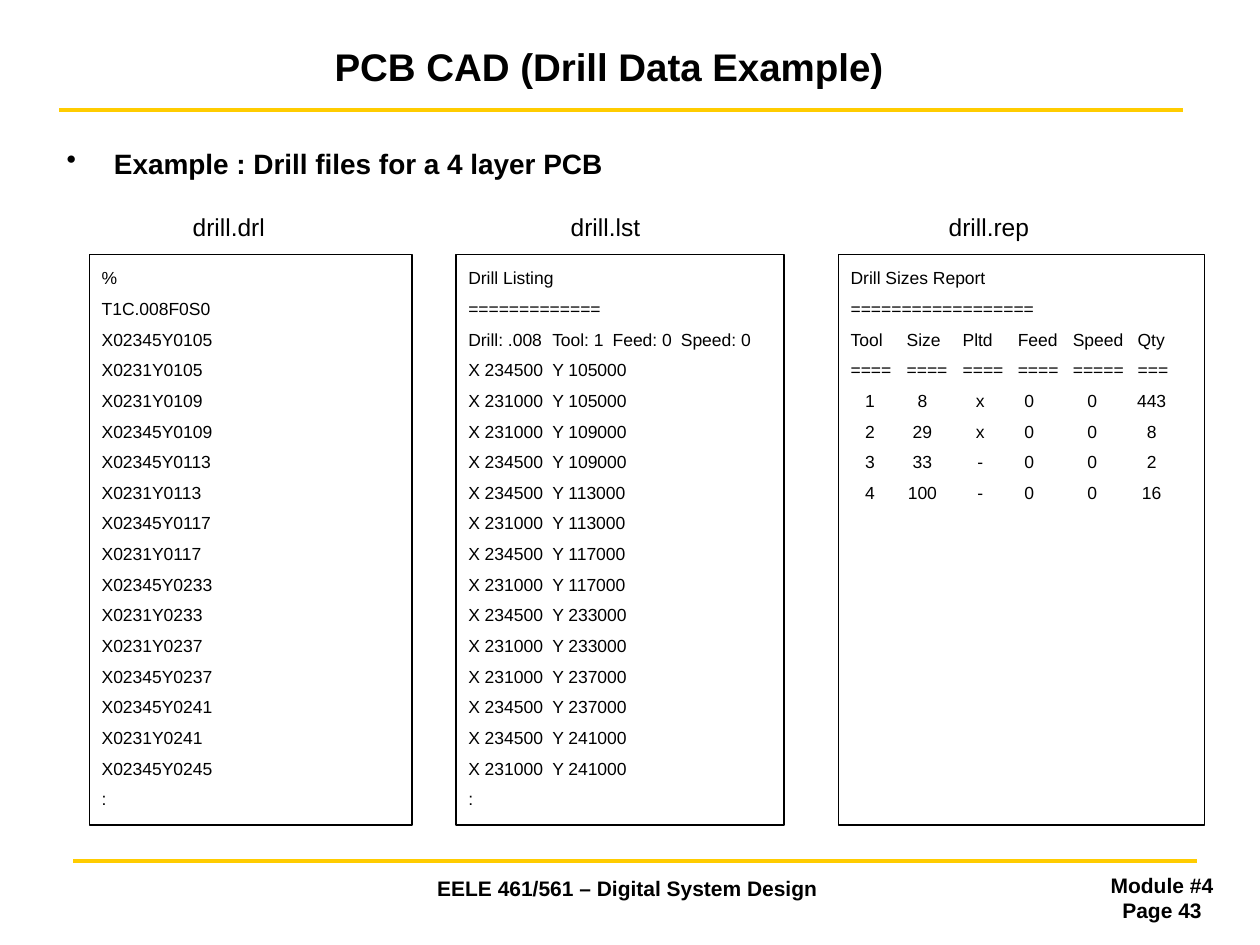
from lxml import etree
from pptx import Presentation
from pptx import util as u
from pptx.dml.color import RGBColor
from pptx.enum import shapes, text
from pptx.oxml import ns

Pt = u.Pt
BLACK = RGBColor(0x00, 0x00, 0x00)
GOLD = RGBColor(0xFF, 0xCC, 0x00)
CENTER = text.PP_ALIGN.CENTER
LEFT = text.PP_ALIGN.LEFT


class SlideBuilder:
    font = "Arial"

    def __init__(self, slide):
        self.slide = slide

    def rule(self, left, top, width):
        line = self.slide.shapes.add_connector(
            shapes.MSO_CONNECTOR.STRAIGHT, Pt(left), Pt(top), Pt(left + width), Pt(top))
        line.line.color.rgb = GOLD
        line.line.width = Pt(2)
        etree.SubElement(line._element.spPr, ns.qn("a:effectLst"))

    def format(self, paragraph, size, bold=False, align=LEFT):
        paragraph.alignment = align
        for run in paragraph.runs:
            run.font.name = self.font
            run.font.size = Pt(size)
            run.font.bold = bold
            run.font.color.rgb = BLACK

    def bullet(self, paragraph, indent):
        properties = paragraph._p.get_or_add_pPr()
        properties.set("marL", str(Pt(indent)))
        properties.set("indent", str(-Pt(indent)))
        etree.SubElement(properties, ns.qn("a:buChar"), char="•")

    def tabs(self, paragraph, positions, align="l"):
        tab_list = etree.SubElement(paragraph._p.get_or_add_pPr(), ns.qn("a:tabLst"))
        for position in positions:
            etree.SubElement(tab_list, ns.qn("a:tab"), pos=str(Pt(position)), algn=align)

    def text_box(self, left, top, width, height, words, size,
                 bold=True, align=CENTER, anchor=text.MSO_ANCHOR.TOP):
        shape = self.slide.shapes.add_textbox(Pt(left), Pt(top), Pt(width), Pt(height))
        frame = shape.text_frame
        frame.word_wrap = True
        frame.vertical_anchor = anchor
        frame.text = words
        for paragraph in frame.paragraphs:
            self.format(paragraph, size, bold, align)
        return frame

    def listing(self, left, width, lines, tabs_for=None):
        """Framed file listing; tabs_for(line) gives tab positions and alignment."""
        shape = self.slide.shapes.add_shape(
            shapes.MSO_SHAPE.RECTANGLE, Pt(left), Pt(145.5), Pt(width), Pt(326))
        shape.shadow.inherit = False
        shape.fill.background()
        shape.line.color.rgb = BLACK
        shape.line.width = Pt(0.75)
        frame = shape.text_frame
        frame.word_wrap = True
        frame.vertical_anchor = text.MSO_ANCHOR.TOP
        frame.margin_left = frame.margin_top = Pt(7.2)
        frame.margin_right = frame.margin_bottom = 0
        frame.text = "\n".join(lines)
        for index, paragraph in enumerate(frame.paragraphs):
            if tabs_for and "\t" in lines[index]:
                self.tabs(paragraph, *tabs_for(lines[index]))
            if index:
                paragraph.space_before = Pt(5.5)
            self.format(paragraph, 10)


DRILL_CODES = """%
T1C.008F0S0
X02345Y0105
X0231Y0105
X0231Y0109
X02345Y0109
X02345Y0113
X0231Y0113
X02345Y0117
X0231Y0117
X02345Y0233
X0231Y0233
X0231Y0237
X02345Y0237
X02345Y0241
X0231Y0241
X02345Y0245
:""".split("\n")

HOLES = [
    (234500, 105000), (231000, 105000), (231000, 109000), (234500, 109000),
    (234500, 113000), (231000, 113000), (234500, 117000), (231000, 117000),
    (234500, 233000), (231000, 233000), (231000, 237000), (234500, 237000),
    (234500, 241000), (231000, 241000),
]

REPORT_HEAD = [
    ("Tool", "Size", "Pltd", "Feed", "Speed", "Qty"),
    ("====", "====", "====", "====", "=====", "==="),
]
REPORT_ROWS = [
    ("1", "8", "x", "0", "0", "443"),
    ("2", "29", "x", "0", "0", "8"),
    ("3", "33", "-", "0", "0", "2"),
    ("4", "100", "-", "0", "0", "16"),
]


def report_tabs(line):
    if line.startswith("\t"):
        return (11, 41, 74, 102, 138, 172), "ctr"
    return (32, 64, 95.5, 127, 164), "l"


def main():
    presentation = Presentation()
    presentation.slide_width, presentation.slide_height = Pt(720), Pt(540)
    slide = presentation.slides.add_slide(presentation.slide_layouts[6])
    builder = SlideBuilder(slide)

    # Rules and footer
    builder.rule(34, 63, 642)
    builder.rule(42, 492, 642)
    builder.text_box(190, 497, 337, 36, "EELE 461/561 – Digital System Design", 12)
    builder.text_box(627, 495, 74, 36, "Module #4\nPage 43", 12)

    # Title
    builder.text_box(42, 18, 612, 40, "PCB CAD (Drill Data Example)", 22,
                     anchor=text.MSO_ANCHOR.MIDDLE)

    # Bullet and file names
    body = builder.text_box(31, 80, 663, 60, "Example : Drill files for a 4 layer PCB",
                            16, align=LEFT)
    builder.bullet(body.paragraphs[0], 27)
    file_names = body.add_paragraph()
    file_names.text = "\tdrill.drl\tdrill.lst\tdrill.rep"
    builder.tabs(file_names, [72 + 216 * column for column in range(3)])
    file_names.space_before = Pt(18.5)
    builder.format(file_names, 14)

    # File listings
    builder.listing(51, 184.5, DRILL_CODES)
    builder.listing(
        260.5, 187.5,
        ["Drill Listing", "=" * 13, "Drill: .008\tTool: 1\tFeed: 0\tSpeed: 0"]
        + [f"X {x}\tY {y}" for x, y in HOLES] + [":"],
        lambda line: ((48, 82.5, 121.5), "l"))
    builder.listing(
        479, 209.5,
        ["Drill Sizes Report", "=" * 18]
        + ["\t".join(row) for row in REPORT_HEAD]
        + ["\t" + "\t".join(row) for row in REPORT_ROWS],
        report_tabs)

    presentation.save("out.pptx")


if __name__ == "__main__":
    main()
